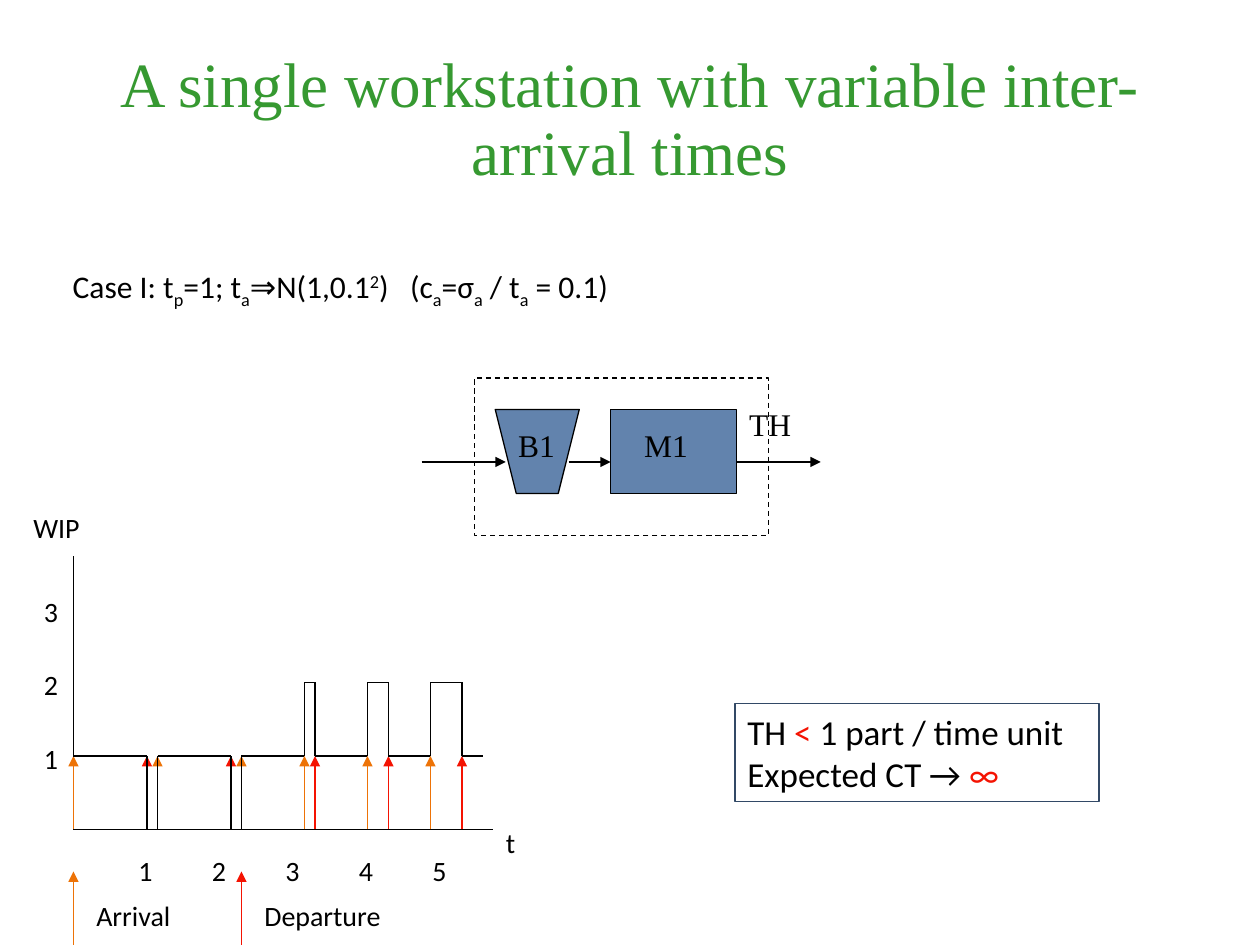
from dataclasses import dataclass
from lxml import etree
from pptx import Presentation
from pptx import util as u
from pptx.dml.color import RGBColor
from pptx.enum import dml, shapes, text
from pptx.oxml.ns import qn


@dataclass(frozen=True)
class Theme:
    serif: str = "Times New Roman"
    sans: str = "Calibri"
    black: str = "000000"
    green: str = "369931"
    blue: str = "6283AD"
    navy: str = "324966"
    orange: str = "ED7307"
    red: str = "F41302"
    title: int = 36
    result: int = 20
    body: int = 18
    label: int = 16
    line: float = 0.75


THEME = Theme()
PLAIN, SUB, SUP = 0, -25000, 30000

TITLE = "A single workstation with variable inter-arrival times"
CASE = [("Case I: t", PLAIN), ("p", SUB), ("=1; t", PLAIN), ("a", SUB),
        ("⇒N(1,0.1", PLAIN), ("2", SUP), (")   (c", PLAIN), ("a", SUB),
        ("=σ", PLAIN), ("a", SUB), (" / t", PLAIN), ("a", SUB), (" = 0.1)", PLAIN)]
RESULT = [[("TH ", THEME.black), ("<", THEME.red), (" 1 part / time unit", THEME.black)],
          [("Expected CT →", THEME.black), (" ∞", THEME.red)]]
STATION_LABELS = [("TH", 421, 228), ("B1", 289, 240), ("M1", 361, 240)]
FLOWS = [(241, 289), (325, 349), (421, 469)]
FLOW_Y = 264
BUFFER = [(283, 234), (295, 282), (319, 282), (331, 234)]

LEFT, BASE, STEP = 42, 474, 42
AXIS_TOP, AXIS_RIGHT, TRACE_END = 318, 282, 276
ARRIVALS = [42, 90, 138, 174, 210, 246]
DEPARTURES = [84, 132, 180, 222, 264]
LEGEND = [("Arrival", 42, THEME.orange), ("Departure", 138, THEME.red)]
LEGEND_BOTTOM = 540

deck = Presentation()
deck.slide_width, deck.slide_height = u.Pt(720), u.Pt(540)
page = deck.slides.add_slide(deck.slide_layouts[6])


def color(value):
    return RGBColor.from_string(value)


def style_font(font, size, face, ink):
    font.size, font.name = u.Pt(size), face
    font.color.rgb = color(ink)


def add_text(words, left, top, width=90, height=27, size=THEME.label, face=THEME.sans,
             ink=THEME.black):
    box = page.shapes.add_textbox(*map(u.Pt, (left, top, width, height)))
    box.text_frame.word_wrap = True
    para = box.text_frame.paragraphs[0]
    para.text = words
    style_font(para.font, size, face, ink)
    return box


def add_line(start, end, ink=THEME.black, arrow=False):
    line = page.shapes.add_connector(shapes.MSO_CONNECTOR.STRAIGHT,
                                     *map(u.Pt, (*start, *end)))
    line.line.color.rgb = color(ink)
    line.line.width = u.Pt(THEME.line)
    if arrow:
        etree.SubElement(line.line._get_or_add_ln(), qn("a:tailEnd"), type="triangle")
    etree.SubElement(line._element.spPr, qn("a:effectLst"))


def style_shape(shape, fill=None, ink=THEME.black):
    shape.shadow.inherit = False
    if fill:
        shape.fill.solid()
        shape.fill.fore_color.rgb = color(fill)
    else:
        shape.fill.background()
    shape.line.color.rgb = color(ink)
    shape.line.width = u.Pt(THEME.line)
    return shape


def add_rect(left, top, width, height, **look):
    rect = page.shapes.add_shape(shapes.MSO_SHAPE.RECTANGLE,
                                 *map(u.Pt, (left, top, width, height)))
    return style_shape(rect, **look)


def level_y(level):
    return BASE - STEP * level


def draw_heading():
    title = add_text(TITLE, 54, 24, 612, 90, THEME.title, THEME.serif, THEME.green)
    title.text_frame.vertical_anchor = text.MSO_ANCHOR.MIDDLE
    para = title.text_frame.paragraphs[0]
    para.alignment = text.PP_ALIGN.CENTER
    para.line_spacing = 0.9
    case = add_text("", 34.5, 149, 479, 36, THEME.body)
    for words, baseline in CASE:
        span = case.text_frame.paragraphs[0].add_run()
        span.text = words
        if baseline:
            span._r.get_or_add_rPr().set("baseline", str(baseline))


def draw_station():
    add_rect(349, 234, 72, 48, fill=THEME.blue)
    start, *rest = [(u.Pt(x), u.Pt(y)) for x, y in BUFFER]
    outline = page.shapes.build_freeform(*start)
    outline.add_line_segments(rest, close=True)
    style_shape(outline.convert_to_shape(), THEME.blue)
    add_rect(271, 216, 168, 90).line.dash_style = dml.MSO_LINE.DASH
    for start, end in FLOWS:
        add_line((start, FLOW_Y), (end, FLOW_Y), arrow=True)
    for words, left, top in STATION_LABELS:
        add_text(words, left, top, 48, 36, THEME.body, THEME.serif)


def draw_chart():
    add_line((LEFT, BASE), (AXIS_RIGHT, BASE))
    add_line((LEFT, BASE), (LEFT, AXIS_TOP))
    add_text("WIP", 12, 288, 45)
    add_text("t", 282, 468, 23)
    for level in range(1, 4):
        add_text(str(level), 18, level_y(level) - 12, 23)
    for time in range(1, 6):
        add_text(str(time), 30 + STEP * time, 484, 23)
    for times, ink in ((ARRIVALS, THEME.orange), (DEPARTURES, THEME.red)):
        for x in times:
            add_line((x, BASE), (x, level_y(1)), ink, True)
    for words, x, ink in LEGEND:
        add_line((x, LEGEND_BOTTOM), (x, LEGEND_BOTTOM - STEP), ink, True)
        add_text(words, x + 6, LEGEND_BOTTOM - 30)


def draw_wip_trace():
    events = sorted([(x, 1) for x in ARRIVALS[1:]] + [(x, -1) for x in DEPARTURES])
    x, level = LEFT, 1
    for event_x, change in events + [(TRACE_END, 0)]:
        if level:
            add_line((x, level_y(level)), (event_x, level_y(level)))
        if change:
            add_line((event_x, level_y(level)), (event_x, level_y(level + change)))
        x, level = event_x, level + change


def draw_result():
    box = add_rect(420, 402, 208, 56, ink=THEME.navy)
    frame = box.text_frame
    frame.word_wrap = True
    for index, spans in enumerate(RESULT):
        para = frame.add_paragraph() if index else frame.paragraphs[0]
        para.alignment = text.PP_ALIGN.LEFT
        for words, ink in spans:
            span = para.add_run()
            span.text = words
            style_font(span.font, THEME.result, THEME.sans, ink)


draw_heading()
draw_station()
draw_chart()
draw_wip_trace()
draw_result()
deck.save("out.pptx")
